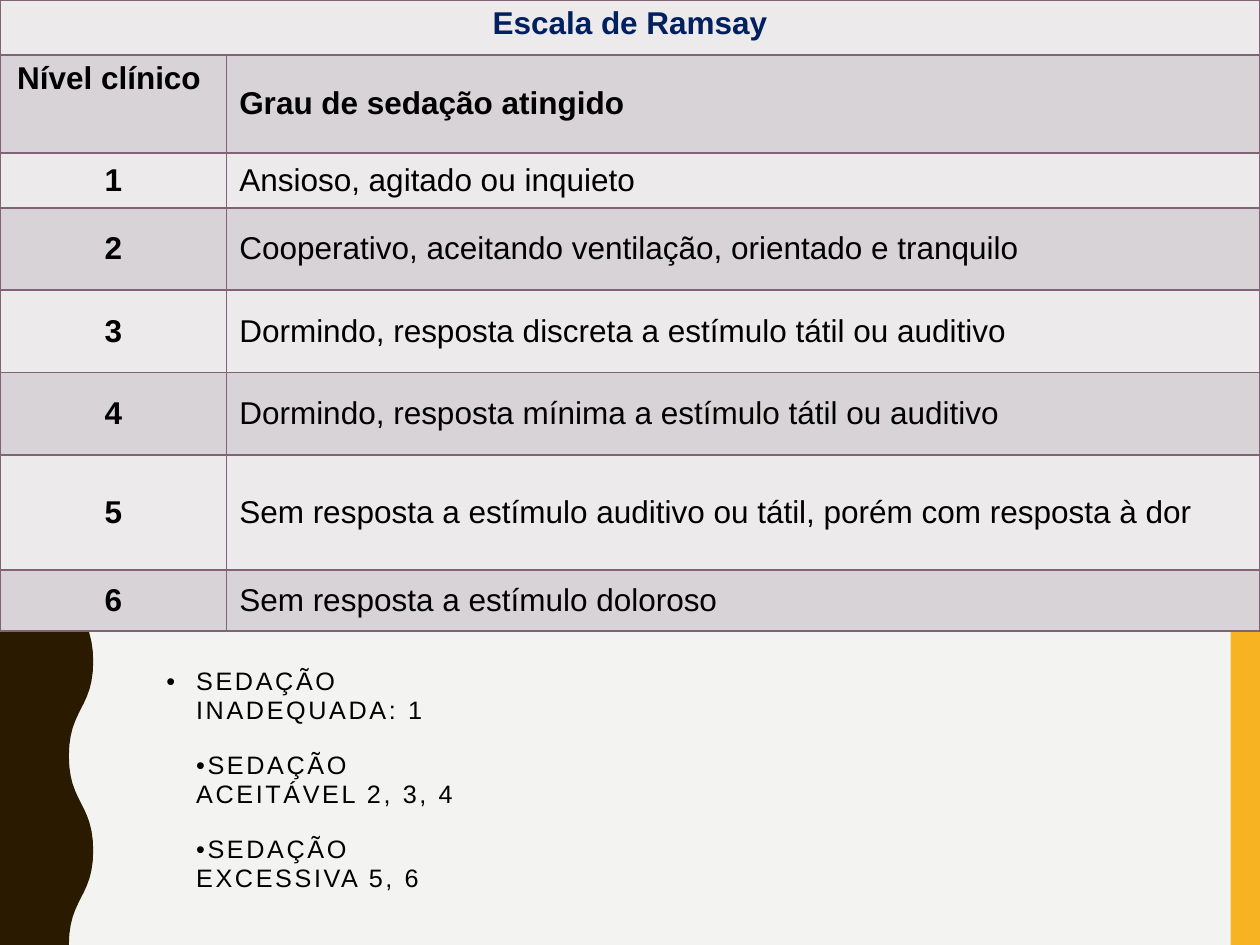
from lxml.etree import SubElement
from pptx import Presentation
from pptx.dml.color import RGBColor
from pptx.enum.shapes import MSO_SHAPE as Shape
from pptx.enum.text import MSO_ANCHOR as Anchor, MSO_AUTO_SIZE as AutoSize, PP_ALIGN as Align
from pptx.oxml.ns import qn
from pptx.util import Cm, Pt

WIDTH, HEIGHT = 25.4, 19.05
COLUMNS = (4.57, 20.83)
ROW_HEIGHTS = (1.11, 1.97, 1.11, 1.66, 1.66, 1.66, 2.32, 1.23)
LEVELS = (
    "Ansioso, agitado ou inquieto",
    "Cooperativo, aceitando ventilação, orientado e tranquilo",
    "Dormindo, resposta discreta a estímulo tátil ou auditivo",
    "Dormindo, resposta mínima a estímulo tátil ou auditivo",
    "Sem resposta a estímulo auditivo ou tátil, porém com resposta à dor",
    "Sem resposta a estímulo doloroso",
)
SUMMARY = (
    "SEDAÇÃO INADEQUADA: 1",
    "•SEDAÇÃO ACEITÁVEL 2, 3, 4",
    "•SEDAÇÃO EXCESSIVA 5, 6",
)


def color(hex_text):
    return RGBColor.from_string(hex_text)


class RamsaySlide:
    font = "Arial"
    ink, heading = "000000", "002060"
    paper, gold, brown = "F3F3F2", "F8B323", "2A1A00"
    bands = ("EDEAEC", "D8D3D6")
    border = "826276"

    def __init__(self, deck):
        self.slide = deck.slides.add_slide(deck.slide_layouts[5])
        self.paint(self.slide.background, self.paper)

    def paint(self, target, fill):
        target.fill.solid()
        target.fill.fore_color.rgb = color(fill)

    def finish(self, shape, fill):
        self.paint(shape, fill)
        shape.line.fill.background()
        shape.shadow.inherit = False

    def style(self, paragraph, size, ink, bold=False):
        for run in paragraph.runs:
            run.font.name, run.font.size, run.font.bold = self.font, Pt(size), bold
            run.font.color.rgb = color(ink)

    def bar(self, left, top, width, height):
        bar = self.slide.shapes.add_shape(
            Shape.RECTANGLE, Cm(left), Cm(top), Cm(width), Cm(height))
        self.finish(bar, self.gold)

    def wave(self, trough, crest, halves=10, steps=12):
        """Left band whose right edge swings between trough and crest."""
        edge = []
        for half in range(halves):
            start, end = (trough, crest) if half % 2 == 0 else (crest, trough)
            for step in range(1, steps + 1):
                t = step / steps
                x = start + (end - start) * (3 * t**2 - 2 * t**3)
                y = HEIGHT / halves * (half + 1.5 * t * (1 - t) + t**3)
                edge.append((Cm(x), Cm(y)))
        builder = self.slide.shapes.build_freeform(0, 0)
        builder.add_line_segments([(Cm(trough), 0), *edge, (0, Cm(HEIGHT))], close=True)
        self.finish(builder.convert_to_shape(), self.brown)

    def summary(self, lines, left, top, width, height):
        title = self.slide.shapes.title
        title.left, title.top, title.width, title.height = map(Cm, (left, top, width, height))
        frame = title.text_frame
        frame.word_wrap, frame.auto_size = True, AutoSize.NONE
        frame.vertical_anchor = Anchor.TOP
        frame.text = "\n".join(lines)
        for number, paragraph in enumerate(frame.paragraphs):
            paragraph.alignment, paragraph.line_spacing = Align.LEFT, 0.94
            paragraph.space_before = Pt(15.5 if number else 0)
            properties = paragraph._p.get_or_add_pPr()
            properties.set("marL", str(Cm(0.6)))
            properties.set("indent", str(0 if number else -Cm(0.6)))
            if number == 0:
                SubElement(properties, qn("a:buFont"), typeface=self.font)
                SubElement(properties, qn("a:buChar"), char="•")
            self.style(paragraph, 14.4, self.ink)
            for run in paragraph.runs:
                run._r.get_or_add_rPr().set("spc", "150")

    def cell(self, cell, text, fill, ink=ink, bold=False, centred=False, anchor=Anchor.MIDDLE):
        properties = cell._tc.get_or_add_tcPr()
        for side in ("lnL", "lnR", "lnT", "lnB"):
            line = SubElement(properties, qn(f"a:{side}"), w=str(Pt(1)))
            SubElement(SubElement(line, qn("a:solidFill")), qn("a:srgbClr"), val=self.border)
        self.paint(cell, fill)
        cell.vertical_anchor = anchor
        cell.text_frame.text = text
        paragraph = cell.text_frame.paragraphs[0]
        paragraph.alignment = Align.CENTER if centred else Align.LEFT
        self.style(paragraph, 18, ink, bold)

    def scale_table(self, levels):
        table = self.slide.shapes.add_table(
            len(ROW_HEIGHTS), len(COLUMNS), 0, 0, Cm(WIDTH), Cm(sum(ROW_HEIGHTS))).table
        for column, width in zip(table.columns, COLUMNS):
            column.width = Cm(width)
        for row, height in zip(table.rows, ROW_HEIGHTS):
            row.height = Cm(height)

        # Merged heading and column names
        light, dark = self.bands
        self.cell(table.cell(0, 0), "Escala de Ramsay", light, self.heading, True, True, Anchor.TOP)
        self.cell(table.cell(0, 1), "", light)
        table.cell(0, 0).merge(table.cell(0, 1))
        self.cell(table.cell(1, 0), "Nível clínico ", dark, bold=True, centred=True,
                  anchor=Anchor.TOP)
        self.cell(table.cell(1, 1), "Grau de sedação atingido", dark, bold=True)

        # Numbered levels in alternating bands
        for level, description in enumerate(levels, 1):
            row, fill = level + 1, self.bands[(level + 1) % 2]
            self.cell(table.cell(row, 0), str(level), fill, bold=True, centred=True)
            self.cell(table.cell(row, 1), description, fill)


def main():
    deck = Presentation()
    deck.slide_width, deck.slide_height = Cm(WIDTH), Cm(HEIGHT)
    ramsay = RamsaySlide(deck)

    # Side decorations
    ramsay.bar(24.81, 0, 0.59, HEIGHT)
    ramsay.wave(trough=1.39, crest=1.88)

    # Content
    ramsay.summary(SUMMARY, 3.1, 13.34, 7.57, 5)
    ramsay.scale_table(LEVELS)
    deck.save("out.pptx")


if __name__ == "__main__":
    main()
